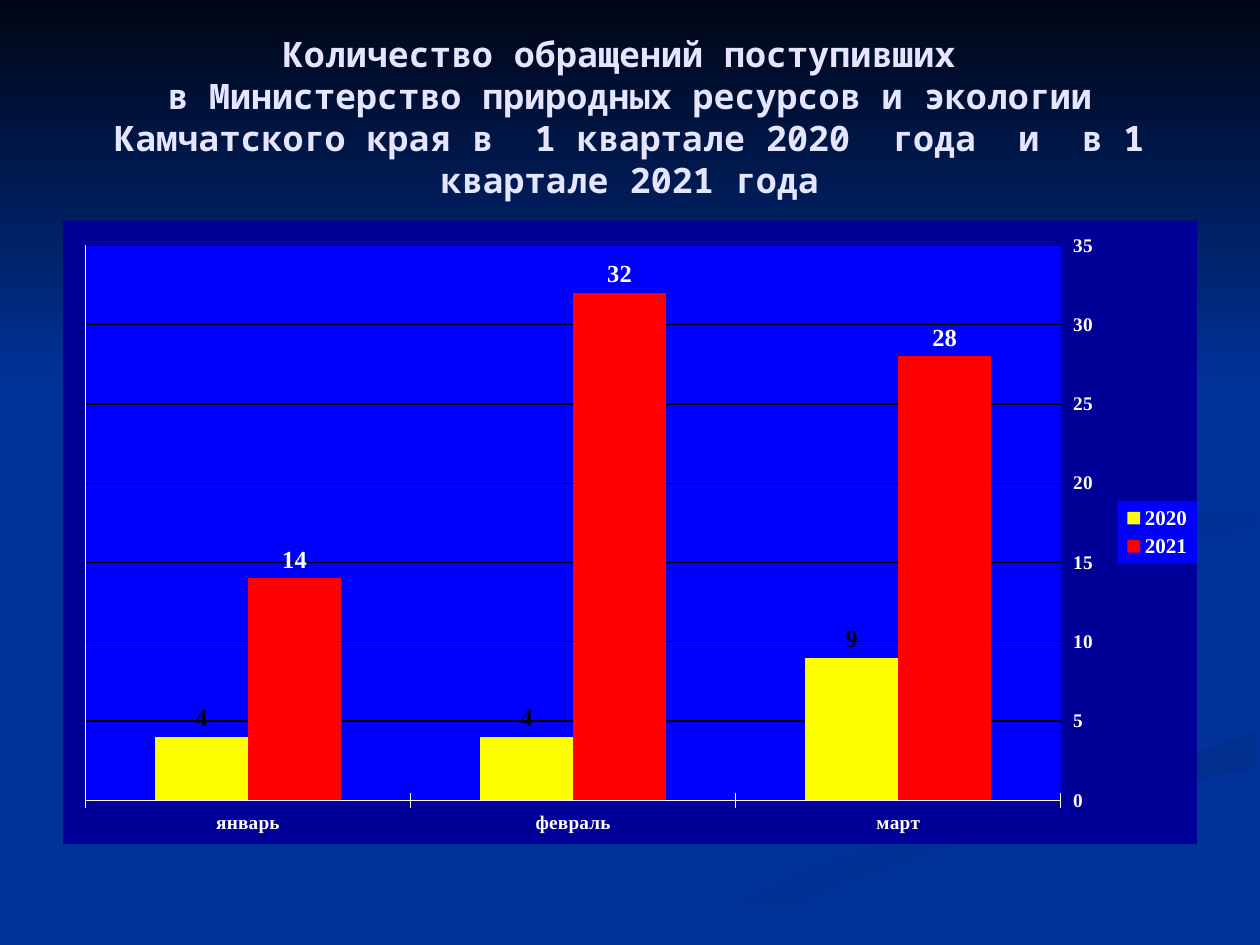
import pptx
import pptx.chart.data
import pptx.dml.color
import pptx.enum.chart
import pptx.enum.shapes
import pptx.enum.text
import pptx.oxml
import pptx.oxml.ns
import pptx.util

PX = 9144  # 100 px to the inch
WIDTH, HEIGHT = 1000, 750
THEME = {
    "background": "003399", "night": "000514", "ribbon": "002F8C", "title": "E5E5FF",
    "text": "FFFFFF", "chart": "000099", "plot": "0000FF", "grid": "000000",
    "title_font": "Noto Sans Mono", "chart_font": "Times New Roman",
    "title_size": 20, "axis_size": 11, "legend_size": 12, "label_size": 14,
}

# Content
TITLE = ("Количество обращений поступивших \vв Министерство природных ресурсов и экологии "
         "Камчатского края в  1 квартале 2020  года  и  в 1 квартале 2021 года")
TITLE_BOX = (50, 30, 900, 125)
CHART_BOX = (50, 175, 900, 495)
SKY_BOX = (0, 0, WIDTH, 308)
MONTHS = ["январь", "февраль", "март"]
SERIES = [  # name, values, bar colour, label colour
    ("2020", (4, 4, 9), "FFFF00", THEME["night"]),
    ("2021", (14, 32, 28), "FF0000", THEME["text"]),
]
PLOT_LAYOUT = (0.02, 0.04, 0.86, 0.89)
LEGEND_LAYOUT = (0.93, 0.45, 0.07, 0.1)

# Background ribbons: first colour, last colour, angle, outline in px
RIBBONS = [
    (THEME["ribbon"], THEME["background"], 90, [
        (503, 749), (571, 749), (649, 710), (752, 672), (903, 630), (998, 609),
        (998, 581), (936, 602), (764, 647), (630, 693), (519, 747)]),
    (THEME["ribbon"], THEME["background"], 45, [
        (781, 460), (791, 478), (826, 496), (805, 476), (843, 448), (896, 435),
        (998, 420), (998, 402), (898, 418), (799, 442)]),
]


def rgb(name):
    return pptx.dml.color.RGBColor.from_string(name)


def scaled(box):
    return [value * PX for value in box]


def style_font(font, size, color, name):
    font.size = pptx.util.Pt(size)
    font.color.rgb = rgb(color)
    font.name = name
    font.bold = True


def chart_fill(color):
    return pptx.oxml.parse_xml(
        f'<c:spPr {pptx.oxml.ns.nsdecls("c", "a")}><a:solidFill><a:srgbClr val="{color}"/>'
        '</a:solidFill><a:ln><a:noFill/></a:ln></c:spPr>')


def chart_layout(box, target=""):
    modes = '<c:xMode val="edge"/><c:yMode val="edge"/>'
    sizes = "".join(f'<c:{key} val="{value}"/>' for key, value in zip("xywh", box))
    return pptx.oxml.parse_xml(
        f'<c:layout {pptx.oxml.ns.nsdecls("c")}><c:manualLayout>{target}{modes}{sizes}'
        '</c:manualLayout></c:layout>')


def remove_layouts(element):
    for layout in element.findall(pptx.oxml.ns.qn("c:layout")):
        element.remove(layout)


def fill_gradient(shape, first, last, angle):
    shape.shadow.inherit = False
    shape.line.fill.background()
    shape.fill.gradient()
    shape.fill.gradient_angle = -angle % 360  # python-pptx counts anticlockwise
    for stop, color in zip(shape.fill.gradient_stops, (first, last)):
        stop.color.rgb = rgb(color)


def add_background(slide):
    slide.background.fill.solid()
    slide.background.fill.fore_color.rgb = rgb(THEME["background"])
    for first, last, angle, points in RIBBONS:
        builder = slide.shapes.build_freeform(*points[0], scale=PX)
        builder.add_line_segments(points[1:], close=True)
        fill_gradient(builder.convert_to_shape(), first, last, angle)
    sky = slide.shapes.add_shape(pptx.enum.shapes.MSO_SHAPE.RECTANGLE, *scaled(SKY_BOX))
    fill_gradient(sky, THEME["night"], THEME["background"], 90)


def add_title(slide):
    frame = slide.shapes.add_textbox(*scaled(TITLE_BOX)).text_frame
    frame.word_wrap = True
    frame.vertical_anchor = pptx.enum.text.MSO_ANCHOR.MIDDLE
    paragraph = frame.paragraphs[0]
    paragraph.text = TITLE
    paragraph.alignment = pptx.enum.text.PP_ALIGN.CENTER
    for run in paragraph.runs:
        style_font(run.font, THEME["title_size"], THEME["title"], THEME["title_font"])


def add_appeals_chart(slide):
    enums = pptx.enum.chart
    data = pptx.chart.data.CategoryChartData()
    data.categories = MONTHS
    for name, values, *_ in SERIES:
        data.add_series(name, values)
    chart = slide.shapes.add_chart(enums.XL_CHART_TYPE.COLUMN_CLUSTERED,
                                   *scaled(CHART_BOX), data).chart
    chart.has_title = False
    style_font(chart.font, THEME["axis_size"], THEME["text"], THEME["chart_font"])

    # Bars and labels
    plot = chart.plots[0]
    plot.gap_width, plot.overlap, plot.vary_by_categories = 150, 0, False
    for series, (_, _, color, label_color) in zip(plot.series, SERIES):
        series.format.fill.solid()
        series.format.fill.fore_color.rgb = rgb(color)
        labels = series.data_labels
        labels.show_value = True
        labels.position = enums.XL_LABEL_POSITION.OUTSIDE_END
        style_font(labels.font, THEME["label_size"], label_color, THEME["chart_font"])

    # Axes
    months, counts = chart.category_axis, chart.value_axis
    months.major_tick_mark = enums.XL_TICK_MARK.CROSS
    counts.major_tick_mark = enums.XL_TICK_MARK.NONE
    counts.tick_label_position = enums.XL_TICK_LABEL_POSITION.HIGH
    counts.minimum_scale, counts.maximum_scale, counts.major_unit = 0, 35, 5
    counts.has_major_gridlines = True
    for part, color in ((months, "text"), (counts, "text"), (counts.major_gridlines, "grid")):
        part.format.line.color.rgb = rgb(THEME[color])
        part.format.line.width = pptx.util.Pt(0.75)

    # Legend
    chart.has_legend = True
    legend = chart.legend
    legend.position = enums.XL_LEGEND_POSITION.RIGHT
    legend.include_in_layout = False
    style_font(legend.font, THEME["legend_size"], THEME["text"], THEME["chart_font"])

    # Fills and layout
    root, qn = chart.element, pptx.oxml.ns.qn
    root.find(qn("c:chart")).addnext(chart_fill(THEME["chart"]))
    area = root.find(".//" + qn("c:plotArea"))
    remove_layouts(area)
    area.insert(0, chart_layout(PLOT_LAYOUT, '<c:layoutTarget val="inner"/>'))
    area.append(chart_fill(THEME["plot"]))
    box = root.find(".//" + qn("c:legend"))
    remove_layouts(box)
    box.find(qn("c:legendPos")).addnext(chart_layout(LEGEND_LAYOUT))
    box.find(qn("c:overlay")).addnext(chart_fill(THEME["plot"]))


def main():
    presentation = pptx.Presentation()
    presentation.slide_width, presentation.slide_height = scaled((WIDTH, HEIGHT))
    slide = presentation.slides.add_slide(presentation.slide_layouts[6])
    add_background(slide)
    add_title(slide)
    add_appeals_chart(slide)
    presentation.save("out.pptx")


if __name__ == "__main__":
    main()
